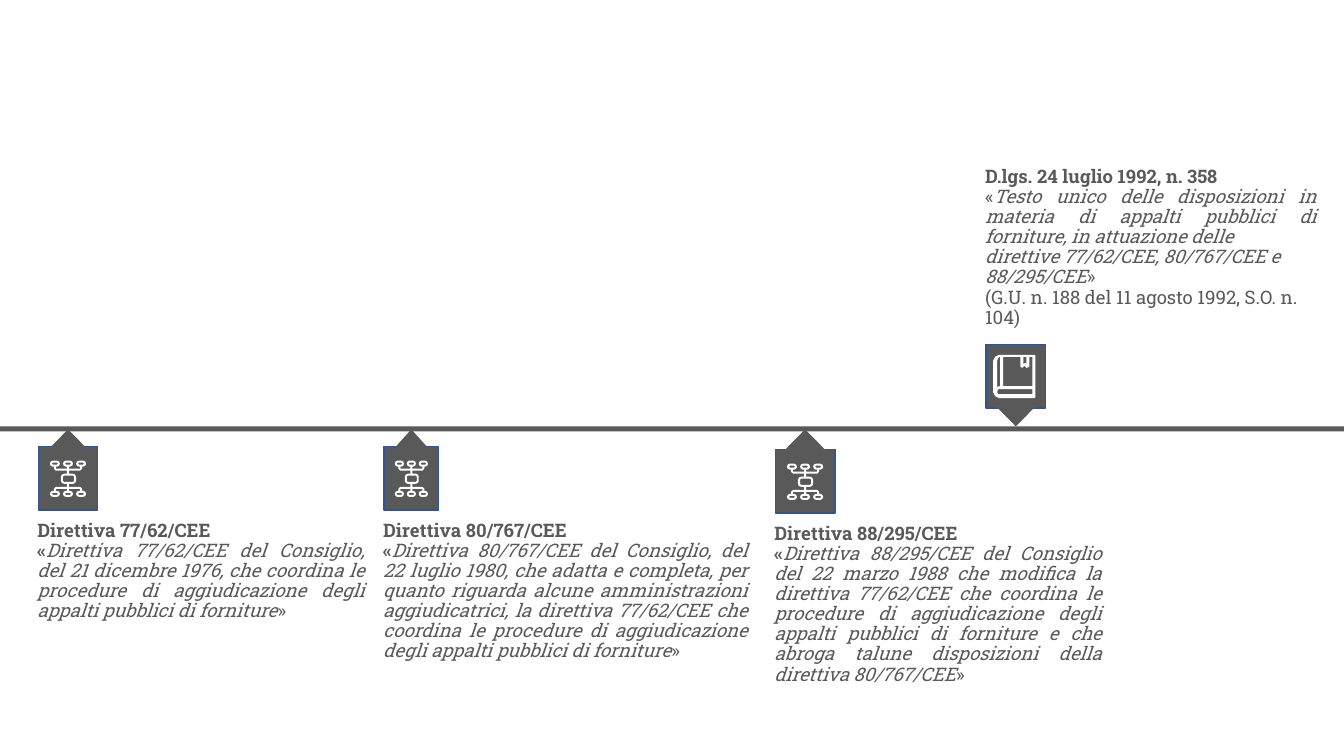
import math

import pptx
import pptx.dml.color
import pptx.enum.shapes
import pptx.enum.text
import pptx.util

Inches = pptx.util.Inches
Pt = pptx.util.Pt
SHAPES = pptx.enum.shapes.MSO_SHAPE
ALIGN = pptx.enum.text.PP_ALIGN

COLORS = {"grey": "595959", "outline": "325491", "white": "FFFFFF"}
FONT = {"name": "Roboto Slab", "size": Pt(13.3)}
STYLES = {
    "bold": {"bold": True, "italic": False},
    "italic": {"bold": False, "italic": True},
    "plain": {"bold": False, "italic": False},
}
INSET = 0.13
PAD = 0.14
POINTER_HEIGHT = 0.3
ICON_SHARE = 0.61

DIRECTIVES = [
    ((0.38, 4.43, 0.59, 0.63), 3.51, "Direttiva 77/62/CEE",
     "Direttiva 77/62/CEE del Consiglio, del 21 dicembre 1976, che coordina le procedure di "
     "aggiudicazione degli appalti pubblici di forniture"),
    ((3.81, 4.43, 0.54, 0.63), 3.88, "Direttiva 80/767/CEE",
     "Direttiva 80/767/CEE del Consiglio, del 22 luglio 1980, che adatta e completa, per quanto "
     "riguarda alcune amministrazioni aggiudicatrici, la direttiva 77/62/CEE che coordina le "
     "procedure di aggiudicazione degli appalti pubblici di forniture"),
    ((7.69, 4.46, 0.59, 0.63), 3.51, "Direttiva 88/295/CEE",
     "Direttiva 88/295/CEE del Consiglio del 22 marzo 1988 che modifica la direttiva 77/62/CEE "
     "che coordina le procedure di aggiudicazione degli appalti pubblici di forniture e che "
     "abroga talune disposizioni della direttiva 80/767/CEE"),
]
DECREE = [
    (ALIGN.LEFT, [("D.lgs. 24 luglio 1992, n. 358", "bold")]),
    (ALIGN.JUSTIFY, [("«", "plain"),
                     ("Testo unico delle disposizioni in materia di appalti pubblici di "
                      "forniture, in attuazione delle", "italic")]),
    (ALIGN.LEFT, [("direttive 77/62/CEE, 80/767/CEE e 88/295/CEE", "italic"), ("»", "plain")]),
    (ALIGN.LEFT, [("(G.U. n. 188 del 11 agosto 1992, S.O. n. 104)", "plain")]),
]


def rgb(name):
    return pptx.dml.color.RGBColor.from_string(COLORS[name])


def paint(shape, fill, outline=None):
    shape.shadow.inherit = False
    shape.fill.solid()
    shape.fill.fore_color.rgb = rgb(fill)
    if outline:
        shape.line.color.rgb = rgb(outline)
        shape.line.width = Pt(1)
    else:
        shape.line.fill.background()


def add_block(slide, kind, box, outline=None):
    shape = slide.shapes.add_shape(kind, *map(Inches, box))
    paint(shape, "grey", outline)
    return shape


def add_text(slide, box, paragraphs):
    frame = slide.shapes.add_textbox(*map(Inches, box)).text_frame
    margins = {f"margin_{side}": Inches(INSET) for side in ("left", "top", "right", "bottom")}
    for key, value in {"word_wrap": True, **margins}.items():
        setattr(frame, key, value)
    for index, (alignment, runs) in enumerate(paragraphs):
        paragraph = frame.add_paragraph() if index else frame.paragraphs[0]
        paragraph.alignment = alignment
        paragraph.line_spacing = 0.9
        for text, style in runs:
            run = paragraph.add_run()
            run.text = text
            run.font.color.rgb = rgb("grey")
            for key, value in {**FONT, **STYLES[style]}.items():
                setattr(run.font, key, value)


def rounded(left, top, width, height, radius, step=45):
    right, bottom = left + width - radius, top + height - radius
    left, top = left + radius, top + radius
    corners = [(left, top, 180), (right, top, 270), (right, bottom, 0), (left, bottom, 90)]
    return [(x + radius * math.cos(math.radians(angle)),
             y + radius * math.sin(math.radians(angle)))
            for x, y, start in corners for angle in range(start, start + 91, step)]


def ring(left, top, width, height, radius, stroke=0.02):
    inner = rounded(left + stroke, top + stroke, width - 2 * stroke, height - 2 * stroke,
                    radius - stroke, 90)
    return [rounded(left, top, width, height, radius), inner[::-1]]


def hierarchy_contours():
    contours = ring(0.11, 0.13, 0.15, 0.1, 0.03)
    for column in range(3):
        for top in (0, 0.3):
            contours += ring(0.13 * column, top, 0.1, 0.06, 0.03)
    half = [(0.17, 0.13), (0.17, 0.1), (0.06, 0.1), (0.04, 0.08), (0.04, 0.06),
            (0.06, 0.06), (0.06, 0.08), (0.17, 0.08), (0.17, 0.06)]
    comb = half + [(0.36 - x, y) for x, y in half[::-1]]
    return contours + [comb, [(x, 0.36 - y) for x, y in comb]]


def book_contours():
    outside = [(0, 0.06), (0.02, 0.02), (0.06, 0), (0.41, 0), (0.42, 0.01),
               (0.42, 0.42), (0.41, 0.43), (0.06, 0.43), (0.02, 0.41), (0, 0.37)]
    cover = [(0.1, 0.02), (0.27, 0.02), (0.27, 0.12), (0.29, 0.13), (0.31, 0.11),
             (0.33, 0.13), (0.36, 0.12), (0.36, 0.02), (0.39, 0.02), (0.39, 0.31),
             (0.1, 0.31)]
    ribbon = [(0.3, 0.02), (0.33, 0.02), (0.33, 0.09), (0.32, 0.08), (0.3, 0.09)]
    spine = [(0.04, 0.06), (0.05, 0.03), (0.07, 0.02), (0.07, 0.31), (0.04, 0.32)]
    pages = [(0.04, 0.37), (0.05, 0.34), (0.39, 0.34), (0.39, 0.39), (0.05, 0.39)]
    return [outside] + [hole[::-1] for hole in (cover, ribbon, spine, pages)]


def add_icon(slide, left, top, contours, stretch=1):
    scaled = [[(Inches(x * stretch), Inches(y)) for x, y in contour] for contour in contours]
    builder = slide.shapes.build_freeform(*scaled[0][0], scale=1.0)
    for index, contour in enumerate(scaled):
        if index:
            builder.move_to(*contour[0])
        builder.add_line_segments(contour[1:], close=True)
    paint(builder.convert_to_shape(Inches(left), Inches(top)), "white")


def add_directive(slide, box, text_width, title, body):
    left, top, width, height = box
    add_block(slide, SHAPES.RECTANGLE, box, "outline")
    add_block(slide, SHAPES.ISOSCELES_TRIANGLE, (left, 4.26, width, POINTER_HEIGHT))
    add_text(slide, (left - PAD, top + 0.61, text_width, 0.71), [
        (ALIGN.LEFT, [(title, "bold")]),
        (ALIGN.JUSTIFY, [("«", "bold"), (body, "italic"), ("»", "plain")]),
    ])
    icon_width = width * ICON_SHARE
    add_icon(slide, left + (width - icon_width) / 2, top + PAD, hierarchy_contours(),
             icon_width / 0.36)


def add_decree(slide, box):
    left, top, width, height = box
    add_block(slide, SHAPES.RECTANGLE, box, "outline")
    pointer = add_block(slide, SHAPES.ISOSCELES_TRIANGLE,
                        (left, top + 0.51, width, POINTER_HEIGHT))
    pointer.rotation = 180
    add_text(slide, (left - PAD, top - 1.89, 3.55, 1.28), DECREE)
    add_icon(slide, left + 0.07, top + 0.1, book_contours())


def main():
    presentation = pptx.Presentation()
    presentation.slide_width = Inches(13.33)
    presentation.slide_height = Inches(7.5)
    slide = presentation.slides.add_slide(presentation.slide_layouts[6])
    add_block(slide, SHAPES.RECTANGLE, (-0.09, 4.23, 13.42, 0.05))
    for directive in DIRECTIVES:
        add_directive(slide, *directive)
    add_decree(slide, (9.78, 3.42, 0.59, 0.63))
    presentation.save("out.pptx")


if __name__ == "__main__":
    main()
